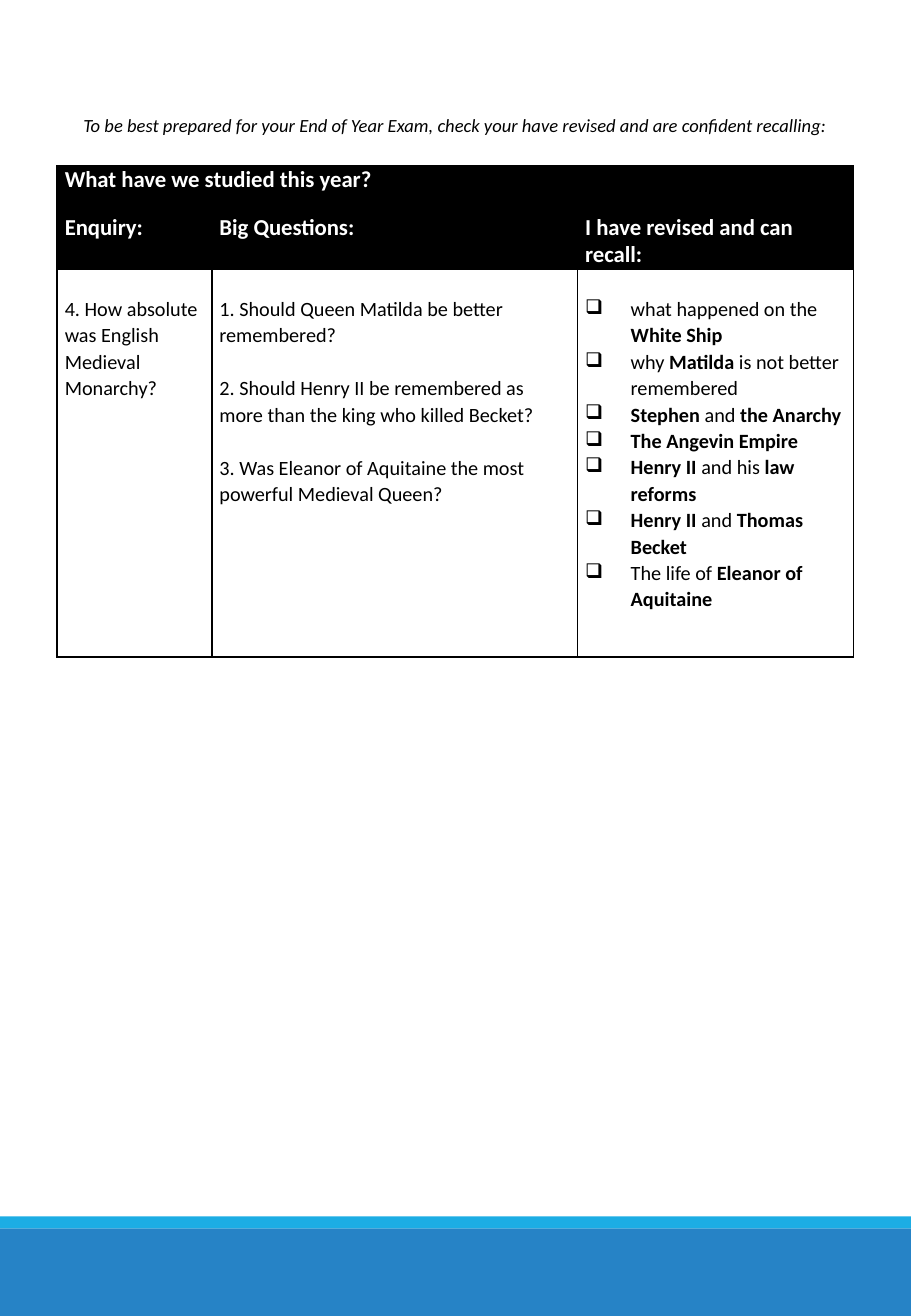
from pptx import Presentation
from pptx.dml.color import RGBColor
from pptx.enum.shapes import MSO_SHAPE
from pptx.enum.text import PP_ALIGN
from pptx.oxml.xmlchemy import OxmlElement
from pptx.util import Pt

RECT = MSO_SHAPE.RECTANGLE
CENTER, LEFT = PP_ALIGN.CENTER, PP_ALIGN.LEFT
BLACK = RGBColor(0x00, 0x00, 0x00)
WHITE = RGBColor(0xFF, 0xFF, 0xFF)
BLUE = RGBColor(0x26, 0x83, 0xC6)
CYAN = RGBColor(0x1C, 0xAD, 0xE4)
WIDE, HIGH = 540, 779.76
EDGE, SPAN = 33.9, 472.1
LINE = 15.7

NOTE = {"size": Pt(11), "italic": True, "color": BLACK}
HEAD = {"size": Pt(13.5), "bold": True, "color": WHITE}
BODY = {"size": Pt(12), "color": BLACK}

TITLE = ["What have we studied this year?"]
HEADS = ["Enquiry:", "Big Questions:", "I have revised and can recall:"]
TOPIC = ["4. How absolute was English Medieval Monarchy?"]
ASKS = [
    "1. Should Queen Matilda be better remembered?",
    "2. Should Henry II be remembered as more than the king who killed Becket?",
    "3. Was Eleanor of Aquitaine the most powerful Medieval Queen?",
]
CHECKS = [
    "what happened on the *White Ship*",
    "why* Matilda *is not better remembered",
    "*Stephen *and* the Anarchy*",
    "*The Angevin Empire*",
    "*Henry II *and his *law reforms*",
    "*Henry II *and* Thomas Becket*",
    "The life of *Eleanor of Aquitaine*",
]


class Sheet:
    """Holds the style and the current slide, and draws each kind of element."""

    def __init__(self, deck, face):
        self.face = face
        self.slide = deck.slides.add_slide(deck.slide_layouts[6])

    def bar(self, top, high, color):
        shape = self.slide.shapes.add_shape(RECT, 0, Pt(top), Pt(WIDE), Pt(high))
        shape.shadow.inherit = False
        shape.fill.solid()
        shape.fill.fore_color.rgb = color
        shape.line.fill.background()

    def text(self, frame, lines, style, align=LEFT, lead=1, gap=0, mark=None):
        frame.word_wrap = True
        for i, line in enumerate(lines):
            para = frame.paragraphs[0] if i == 0 else frame.add_paragraph()
            para.alignment, para.line_spacing = align, lead
            para.space_before = Pt(gap if i else 0)
            if mark:
                props = para._p.get_or_add_pPr()
                props.set("marL", str(Pt(27)))
                props.set("indent", str(-Pt(27)))
                sign = OxmlElement("a:buChar")
                sign.set("char", mark)
                props.append(sign)
            for n, part in enumerate(line.split("*")):
                if part:
                    self.run(para, part, {"bold": n % 2 == 1, **style})

    def run(self, para, text, style):
        run = para.add_run()
        run.text = text
        run.font.name = self.face
        for key, value in style.items():
            if key == "color":
                run.font.color.rgb = value
            else:
                setattr(run.font, key, value)

    def note(self, top, high, text):
        box = self.slide.shapes.add_textbox(Pt(EDGE), Pt(top), Pt(SPAN), Pt(high))
        self.text(box.text_frame, [text], NOTE, CENTER)

    def grid(self, top, cols, rows):
        frame = self.slide.shapes.add_table(
            len(rows), len(cols), Pt(EDGE), Pt(top), Pt(SPAN), Pt(sum(rows)))
        table = frame.table
        table.first_row = table.horz_banding = False
        for col, wide in zip(table.columns, cols):
            col.width = Pt(wide)
        for row, high in zip(table.rows, rows):
            row.height = Pt(high)
        return table

    def cell(self, cell, fill, inset=0):
        pads = {"left": 4.5, "right": 4.5, "top": inset, "bottom": 0}
        for side, pad in pads.items():
            setattr(cell, "margin_" + side, Pt(pad))
        props = cell._tc.get_or_add_tcPr()
        for side in "LRTB":
            line = OxmlElement("a:ln" + side)
            line.set("w", str(Pt(1)))
            paint = OxmlElement("a:solidFill")
            color = OxmlElement("a:srgbClr")
            color.set("val", str(BLACK))
            paint.append(color)
            line.append(paint)
            props.append(line)
        cell.fill.solid()
        cell.fill.fore_color.rgb = fill


def main():
    deck = Presentation()
    deck.slide_width, deck.slide_height = Pt(WIDE), Pt(HIGH)
    sheet = Sheet(deck, "Calibri")
    sheet.bar(727.9, HIGH - 727.9, BLUE)
    sheet.bar(720.7, 7.2, CYAN)

    table = sheet.grid(98.4, [91.7, 216.8, 163.6], [28.1, 32.6, 230])
    for r in range(3):
        for c in range(3):
            sheet.cell(table.cell(r, c), *((WHITE, LINE) if r == 2 else (BLACK,)))
    table.cell(0, 0).merge(table.cell(0, 2))
    sheet.text(table.cell(0, 0).text_frame, TITLE, HEAD)
    for c, head in enumerate(HEADS):
        sheet.text(table.cell(1, c).text_frame, [head], HEAD)
    bodies = [(TOPIC, {}), (ASKS, {"gap": LINE}), (CHECKS, {"mark": "❑"})]
    for c, (lines, extra) in enumerate(bodies):
        sheet.text(table.cell(2, c).text_frame, lines, BODY, lead=1.07, **extra)

    sheet.note(64.1, 20.9, "To be best prepared for your End of Year Exam, "
               "check your have revised and are confident recalling:")
    deck.save("out.pptx")


if __name__ == "__main__":
    main()
